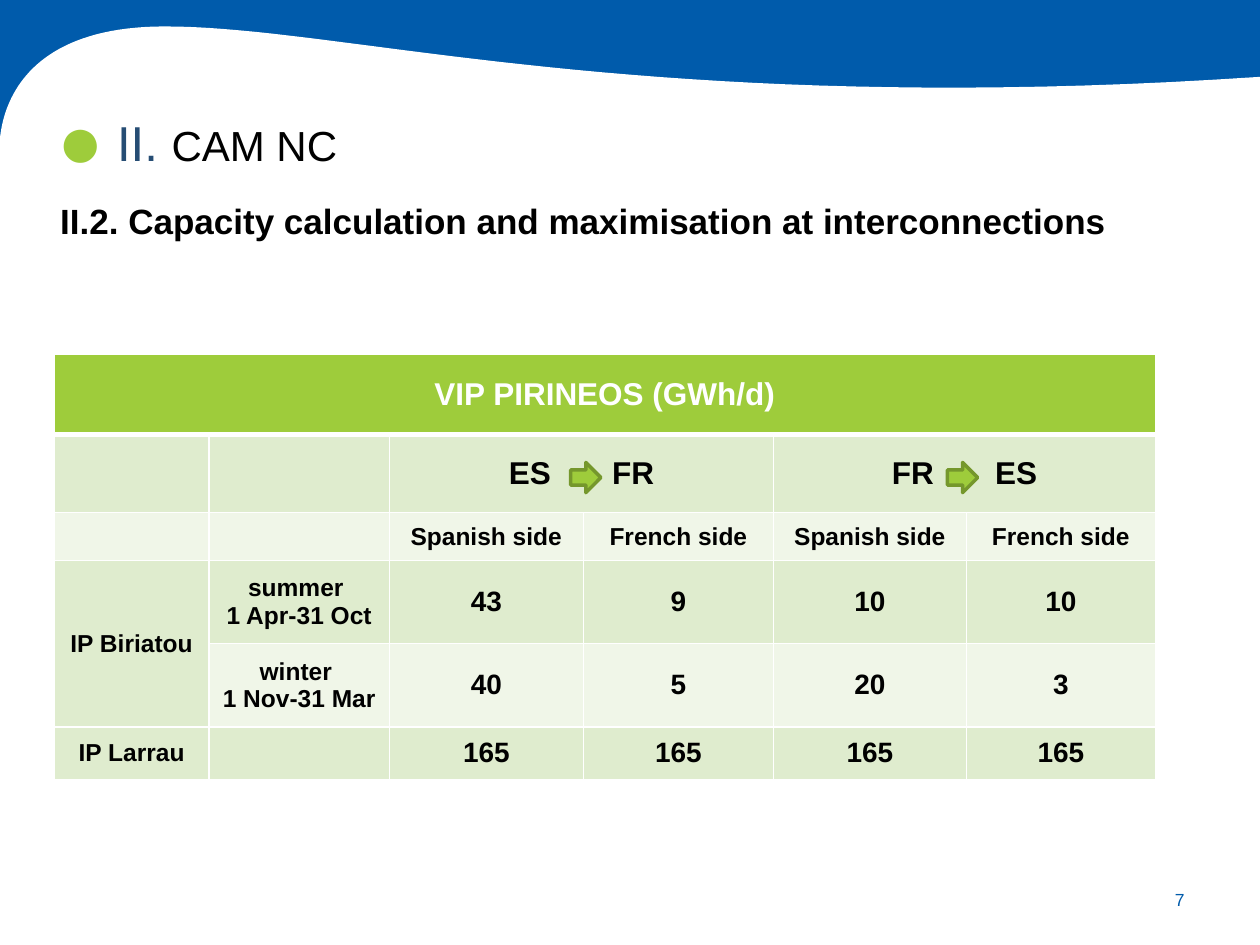
from lxml.etree import SubElement
from pptx import Presentation
from pptx.dml.color import RGBColor as Rgb
from pptx.enum.shapes import MSO_SHAPE as Shape
from pptx.enum.text import MSO_ANCHOR as Anchor, MSO_AUTO_SIZE as Fit, PP_ALIGN as Align
from pptx.oxml.ns import qn
from pptx.util import Inches, Pt

HEX = {"blue": "005BAB", "navy": "264D74", "green": "9ECC3B", "olive": "75972C",
       "pale": "DFECCE", "light": "F0F6E8", "white": "FFFFFF", "black": "000000"}
COLS = [1.23, 1.43, 1.54, 1.51, 1.53, 1.5]
ROWS = [0.64, 0.62, 0.38, 0.66, 0.66, 0.42]
SIDES = ["Spanish side", "French side"]
DATA = [
    ["VIP PIRINEOS (GWh/d)"] + [""] * 5,
    ["", "", "ES FR", "", "FR ES", ""],
    ["", ""] + SIDES * 2,
    ["IP Biriatou", "summer \n1 Apr-31 Oct", "43", "9", "10", "10"],
    ["", "winter \n1 Nov-31 Mar", "40", "5", "20", "3"],
    ["IP Larrau", ""] + ["165"] * 4,
]
MERGES = [(0, 0, 0, 5), (1, 2, 1, 3), (1, 4, 1, 5), (3, 0, 4, 0)]


def rgb(name):
    """Return the named colour."""
    return Rgb.from_string(HEX[name])


def style(run, size, color, bold=False):
    """Format one run."""
    font = run.font
    font.name, font.size, font.bold = "Arial", Pt(size), bold
    font.color.rgb = rgb(color)


def paint(shape, fill, line=None):
    """Give a shape a flat fill and an optional outline."""
    shape.shadow.inherit = False
    shape.fill.solid()
    shape.fill.fore_color.rgb = rgb(fill)
    if line:
        shape.line.color.rgb = rgb(line)
        shape.line.width = Pt(2)
    else:
        shape.line.fill.background()


def curve(start, one, two, end, steps=40):
    """Return the points along a cubic curve, without its start."""
    points = []
    for step in range(1, steps + 1):
        t = step / steps
        u = 1 - t
        points.append(tuple(u**3 * a + 3 * u * u * t * b + 3 * u * t * t * c + t**3 * d
                            for a, b, c, d in zip(start, one, two, end)))
    return points


def add_wave(slide, left, top, width, height):
    """Draw the blue band with a white wave below it."""
    band = slide.shapes.add_shape(Shape.RECTANGLE, Inches(left), Inches(top),
                                  Inches(width), Inches(1.15))
    paint(band, "blue")
    foot, crest, edge = (0, 1.1), (1.31, 0.21), (width, 0.61)
    points = curve(foot, (0.03, 0.8), (0.23, 0.21), crest)
    points += curve(crest, (2.76, 0.21), (5.1, 0.94), edge)
    points += [(width, height), (0, height)]
    pen = slide.shapes.build_freeform(Inches(left), Inches(top + foot[1]), 1.0)
    pen.add_line_segments([(Inches(left + x), Inches(top + y)) for x, y in points])
    paint(pen.convert_to_shape(), "white")


def add_title(slide, left, top, width, height):
    """Place the slide title in two sizes, in front of the wave."""
    title = slide.shapes.title
    slide.shapes._spTree.append(title._element)
    title.left, title.top = Inches(left), Inches(top)
    title.width, title.height = Inches(width), Inches(height)
    frame = title.text_frame
    frame.auto_size, frame.vertical_anchor = Fit.NONE, Anchor.TOP
    para = frame.paragraphs[0]
    para.alignment = Align.LEFT
    for text, size, color in [("II. ", 28, "navy"), ("CAM NC", 24, "black")]:
        run = para.add_run()
        run.text = text
        style(run, size, color)


def add_label(slide, box, text, size, color, align, anchor, bold=False, wrap=True):
    """Add a one-line text box and return its paragraph."""
    frame = slide.shapes.add_textbox(*map(Inches, box)).text_frame
    frame.word_wrap, frame.vertical_anchor = wrap, anchor
    frame.text = text
    para = frame.paragraphs[0]
    para.alignment = align
    style(para.runs[0], size, color, bold)
    return para


def set_edges(cell, row):
    """Draw the white borders of a cell."""
    props = cell._tc.get_or_add_tcPr()
    for side in "LRTB":
        thick = (row, side) in [(0, "B"), (1, "T")]
        line = SubElement(props, qn("a:ln" + side), w=str(Pt(3 if thick else 1)))
        fill = SubElement(line, qn("a:solidFill"))
        SubElement(fill, qn("a:srgbClr"), val=HEX["white"])


def fill_cell(cell, row, col):
    """Write and format one table cell."""
    set_edges(cell, row)
    cell.fill.solid()
    shade = "green" if row == 0 else "light" if row in (2, 4) else "pale"
    cell.fill.fore_color.rgb = rgb(shade)
    cell.vertical_anchor = Anchor.MIDDLE
    text = DATA[row][col]
    size = 18 if row < 2 else 16 if row > 2 and col > 1 else 14
    first = cell.text_frame.paragraphs[0]
    if not text:
        SubElement(first._p, qn("a:endParaRPr"), sz=str(size * 100))
        return
    if row == 1:
        start, end = text.split()
        for part in (start, " ", end):
            first.add_run().text = part
        first.runs[1]._r.get_or_add_rPr().set("spc", "3000")
    else:
        cell.text_frame.text = text
    for para in cell.text_frame.paragraphs:
        para.alignment = Align.CENTER
        for run in para.runs:
            style(run, size, "black" if row else "white", True)


def add_grid(slide, left, top):
    """Place the capacity table and its direction arrows."""
    frame = slide.shapes.add_table(len(ROWS), len(COLS), Inches(left), Inches(top),
                                   Inches(sum(COLS)), Inches(sum(ROWS)))
    table = frame.table
    for col, width in zip(table.columns, COLS):
        col.width = Inches(width)
    for row, height in zip(table.rows, ROWS):
        row.height = Inches(height)
    for r in range(len(ROWS)):
        for c in range(len(COLS)):
            fill_cell(table.cell(r, c), r, c)
    for r, c, last, end in MERGES:
        table.cell(r, c).merge(table.cell(last, end))
    for col, shift in [(2, 1.44), (4, 1.38)]:
        arrow = slide.shapes.add_shape(
            Shape.RIGHT_ARROW, Inches(left + sum(COLS[:col]) + shift),
            Inches(top + ROWS[0] + 0.22), Inches(0.24), Inches(0.24))
        paint(arrow, "green", "olive")


def main():
    """Build the slide."""
    deck = Presentation()
    deck.slide_width, deck.slide_height = Inches(10), Inches(7.5)
    slide = deck.slides.add_slide(deck.slide_layouts[5])
    add_wave(slide, 0, 0, 10, 7.5)
    add_title(slide, 0.83, 0.84, 9.17, 0.57)
    add_label(slide, (0.36, 0.57, 0.55, 0.94), "●", 44, "green",
              Align.CENTER, Anchor.BOTTOM, wrap=False)
    head = add_label(slide, (0.38, 1.47, 9.43, 0.6),
                     "II.2. Capacity calculation and maximisation at interconnections",
                     20, "black", Align.LEFT, Anchor.TOP, bold=True)
    head.line_spacing = 1.2
    add_grid(slide, 0.43, 2.81)
    add_label(slide, (8.94, 6.94, 0.56, 0.4), "7", 10, "blue", Align.RIGHT, Anchor.MIDDLE)
    deck.save("out.pptx")


if __name__ == "__main__":
    main()
